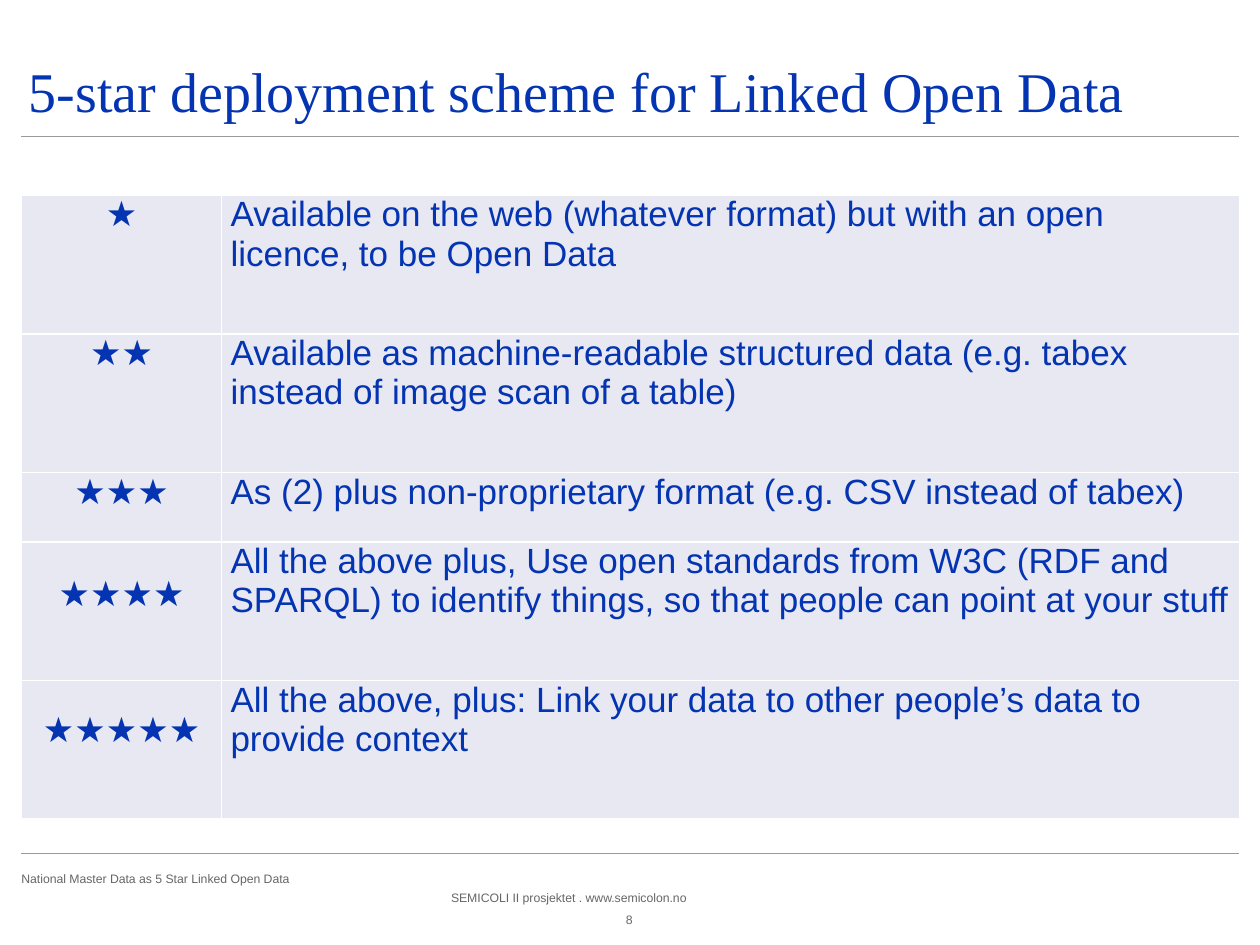
from lxml import etree
from pptx import Presentation
from pptx.dml.color import RGBColor
from pptx.enum.shapes import MSO_CONNECTOR
from pptx.enum.text import MSO_ANCHOR as Anchor, MSO_AUTO_SIZE as AutoSize, PP_ALIGN as Align
from pptx.oxml import parse_xml
from pptx.oxml.ns import nsdecls, qn
from pptx.util import Inches, Pt

BLUE = RGBColor(0x04, 0x34, 0xB1)
GREY = RGBColor(0x66, 0x66, 0x66)
RULE_GREY = RGBColor(0x99, 0x99, 0x9E)
CELL_FILL = RGBColor(0xE7, 0xE8, 0xF2)
WHITE = RGBColor(0xFF, 0xFF, 0xFF)

LEFT = 0.17
RIGHT = 9.83
COLUMN_WIDTHS = (1.59, 8.08)
LEVELS = [
    (1.1, 0, "Available on the web (whatever format) but with an open licence, to be Open Data"),
    (1.1, 0, "Available as machine-readable structured data (e.g. tabex instead of image scan of a table)"),
    (0.55, 0, "As (2) plus non-proprietary format (e.g. CSV instead of tabex)"),
    (1.1, 0.26, "All the above plus, Use open standards from W3C (RDF and SPARQL) "
                "to identify things, so that people can point at your stuff"),
    (1.1, 0.24, "All the above, plus: Link your data to other people’s data to provide context"),
]
FOOTERS = [
    (LEFT, 6.91, 3.54, "National Master Data as 5 Star Linked Open Data", Align.LEFT),
    (3.58, 7.06, 3.54, "SEMICOLI II prosjektet . www.semicolon.no", Align.LEFT),
    (4.8, 7.24, 0.39, "8", Align.CENTER),
]


class SlideBuilder:
    body_font = "Arial"
    title_font = "Times New Roman"

    def __init__(self, slide):
        self.slide = slide
        slide.background.fill.solid()
        slide.background.fill.fore_color.rgb = WHITE

    def add_text(self, frame, text, font, size, color, align=Align.LEFT):
        paragraph = frame.paragraphs[0]
        paragraph.alignment = align
        run = paragraph.add_run()
        run.text = text
        run.font.name = font
        run.font.size = Pt(size)
        run.font.color.rgb = color
        return paragraph

    def set_frame(self, frame, anchor, side_margin=0):
        frame.word_wrap = True
        frame.auto_size = AutoSize.NONE
        frame.vertical_anchor = anchor
        frame.margin_left = frame.margin_right = Inches(side_margin)
        frame.margin_top = frame.margin_bottom = 0

    def title(self, text):
        shape = self.slide.shapes.title
        shape.left, shape.top = Inches(LEFT), Inches(0.16)
        shape.width, shape.height = Inches(9.67), Inches(0.82)
        self.set_frame(shape.text_frame, Anchor.BOTTOM, 0.06)
        self.add_text(shape.text_frame, text, self.title_font, 32, BLUE)

    def rule(self, y):
        line = self.slide.shapes.add_connector(
            MSO_CONNECTOR.STRAIGHT, Inches(LEFT), Inches(y), Inches(RIGHT), Inches(y))
        line.line.color.rgb = RULE_GREY
        line.line.width = Pt(0.5)
        etree.SubElement(line._element.spPr, qn("a:effectLst"))

    def footer(self, left, top, width, text, align):
        box = self.slide.shapes.add_textbox(
            Inches(left), Inches(top), Inches(width), Inches(0.12))
        self.set_frame(box.text_frame, Anchor.MIDDLE)
        self.add_text(box.text_frame, text, self.body_font, 7, GREY, align)

    def cell(self, cell, text, align, top_margin=0):
        cell.margin_left = cell.margin_right = Inches(0.07)
        cell.margin_top, cell.margin_bottom = Inches(top_margin), 0
        cell.vertical_anchor = Anchor.TOP
        paragraph = self.add_text(cell.text_frame, text, self.body_font, 20, BLUE, align)
        paragraph.space_after = Pt(12)
        properties = cell._tc.get_or_add_tcPr()
        for side in ("lnL", "lnR", "lnT", "lnB"):
            properties.append(parse_xml(
                f'<a:{side} {nsdecls("a")} w="{Pt(1)}"><a:solidFill>'
                f'<a:srgbClr val="{WHITE}"/></a:solidFill></a:{side}>'))
        cell.fill.solid()
        cell.fill.fore_color.rgb = CELL_FILL

    def star_table(self, levels):
        height = sum(level[0] for level in levels)
        table = self.slide.shapes.add_table(
            len(levels), len(COLUMN_WIDTHS), Inches(LEFT), Inches(1.55),
            Inches(sum(COLUMN_WIDTHS)), Inches(height)).table
        table.first_row = table.horz_banding = False
        for column, width in zip(table.columns, COLUMN_WIDTHS):
            column.width = Inches(width)
        for index, (row_height, star_drop, text) in enumerate(levels):
            table.rows[index].height = Inches(row_height)
            self.cell(table.cell(index, 0), "★" * (index + 1), Align.CENTER, star_drop)
            self.cell(table.cell(index, 1), text, Align.LEFT)


def main():
    presentation = Presentation()
    presentation.slide_width, presentation.slide_height = Inches(10), Inches(7.5)
    builder = SlideBuilder(presentation.slides.add_slide(presentation.slide_layouts[5]))
    builder.title("5-star deployment scheme for Linked Open Data")
    for y in (1.08, 6.77):
        builder.rule(y)
    builder.star_table(LEVELS)
    for footer in FOOTERS:
        builder.footer(*footer)
    presentation.save("out.pptx")


if __name__ == "__main__":
    main()
